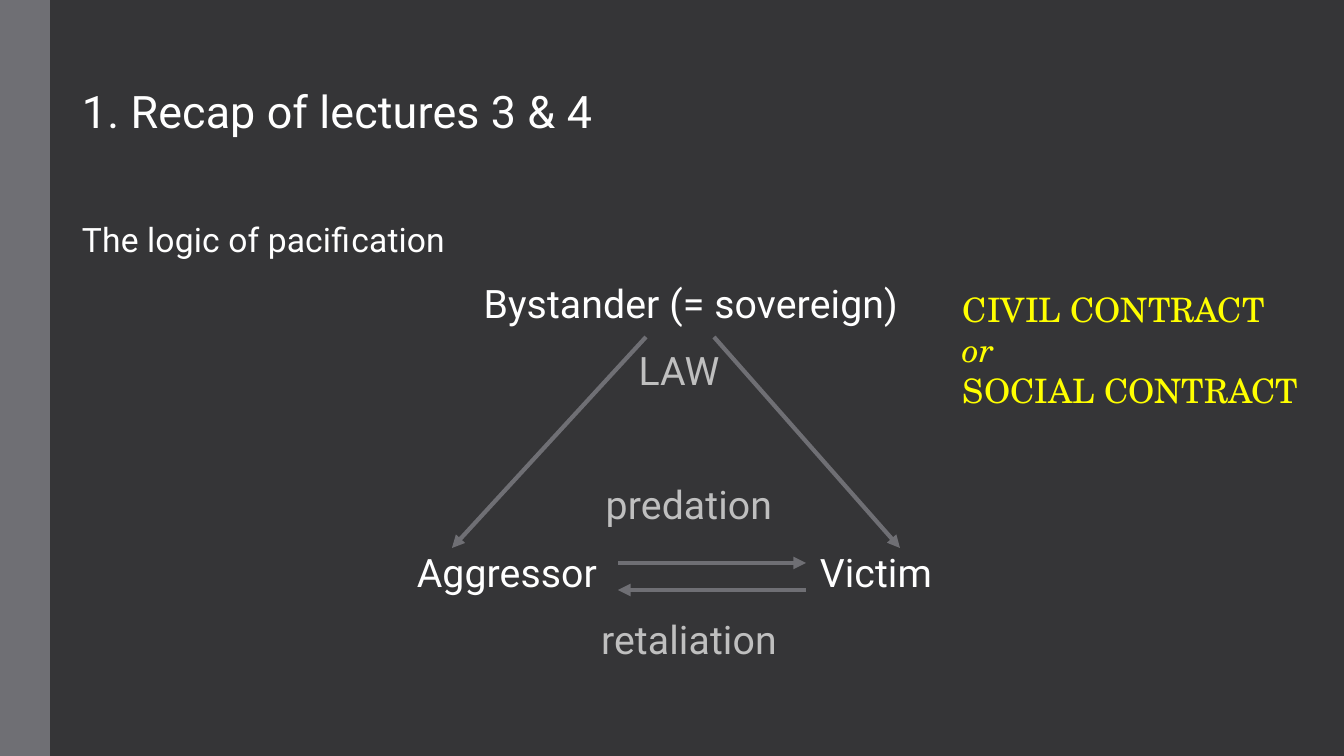
from lxml import etree
from pptx import Presentation
from pptx.dml.color import RGBColor
from pptx.enum.shapes import MSO_CONNECTOR, MSO_SHAPE
from pptx.enum.text import MSO_ANCHOR, MSO_AUTO_SIZE, PP_ALIGN
from pptx.oxml.ns import qn
from pptx.util import Pt

SLIDE_W, SLIDE_H = 1344, 756
EMU_PER_PX = 12192000 / SLIDE_W

BACKGROUND = RGBColor(0x35, 0x35, 0x37)
GREY = RGBColor(0x6F, 0x6F, 0x74)
PALE_GREY = RGBColor(0xBF, 0xBF, 0xBF)
WHITE = RGBColor(0xFF, 0xFF, 0xFF)
YELLOW = RGBColor(0xFF, 0xFF, 0x00)

BODY_FONT = "Roboto"
CONTRACT_FONT = "TeX Gyre Schola"
LEFT, CENTER = PP_ALIGN.LEFT, PP_ALIGN.CENTER
MIDDLE = MSO_ANCHOR.MIDDLE
NO_AUTOFIT = MSO_AUTO_SIZE.NONE
STRAIGHT = MSO_CONNECTOR.STRAIGHT
RECTANGLE = MSO_SHAPE.RECTANGLE

TITLE_ONLY = 5
TEXT_LEFT = 82
LINE_H = 60

# text, centre x, centre y, width, colour
ROLES_AND_ACTIONS = [
    ("Bystander (= sovereign)", 691, 303, 460, WHITE),
    ("LAW", 679, 370, 120, PALE_GREY),
    ("predation", 689, 504, 220, PALE_GREY),
    ("Aggressor", 507, 572, 220, WHITE),
    ("Victim", 876, 572, 140, WHITE),
    ("retaliation", 689, 639, 220, PALE_GREY),
]

# start, end
ARROWS = [
    ((646, 337), (452, 548)),
    ((714, 337), (900, 548)),
    ((618, 563), (806, 563)),
    ((806, 590), (618, 590)),
]


def px(length):
    return round(length * EMU_PER_PX)


def place(shape, left, top, width, height):
    shape.left, shape.top = px(left), px(top)
    shape.width, shape.height = px(width), px(height)


def format_line(shape, text, size, color, align):
    """Fill a shape with one line of body text, centred vertically."""
    frame = shape.text_frame
    frame.text = text
    frame.word_wrap = True
    frame.auto_size = NO_AUTOFIT
    frame.vertical_anchor = MIDDLE
    frame.margin_left = frame.margin_right = 0
    frame.margin_top = frame.margin_bottom = 0
    paragraph = frame.paragraphs[0]
    paragraph.alignment = align
    run = paragraph.runs[0]
    run.font.name = BODY_FONT
    run.font.size = Pt(size)
    run.font.color.rgb = color
    run.font._element.set("spc", "10")


def add_label(slide, text, left, center_y, width, size, color, align):
    label = slide.shapes.add_textbox(0, 0, 0, 0)
    place(label, left, center_y - LINE_H // 2, width, LINE_H)
    format_line(label, text, size, color, align)


def add_arrow(slide, start, end):
    arrow = slide.shapes.add_connector(STRAIGHT, *map(px, start + end))
    arrow.line.color.rgb = GREY
    arrow.line.width = Pt(3)
    etree.SubElement(arrow.line._get_or_add_ln(), qn("a:tailEnd"), type="triangle")
    etree.SubElement(arrow._element.spPr, qn("a:effectLst"))


def add_side_bar(slide):
    bar = slide.shapes.add_shape(RECTANGLE, 0, 0, px(50), px(SLIDE_H))
    bar.shadow.inherit = False
    bar.fill.solid()
    bar.fill.fore_color.rgb = GREY
    bar.line.fill.background()


def add_contract_note(slide):
    note = slide.shapes.add_textbox(0, 0, 0, 0)
    place(note, 953, 284, 356, 173)
    frame = note.text_frame
    frame.word_wrap = True
    frame.text = "CIVIL CONTRACT\nor\nSOCIAL CONTRACT"
    for paragraph in frame.paragraphs:
        font = paragraph.runs[0].font
        font.name = CONTRACT_FONT
        font.size = Pt(24)
        font.color.rgb = YELLOW
        font.italic = paragraph.text == "or"


def main():
    deck = Presentation()
    deck.slide_width, deck.slide_height = px(SLIDE_W), px(SLIDE_H)
    slide = deck.slides.add_slide(deck.slide_layouts[TITLE_ONLY])
    slide.background.fill.solid()
    slide.background.fill.fore_color.rgb = BACKGROUND

    add_side_bar(slide)
    title = slide.shapes.title
    place(title, TEXT_LEFT, 111 - LINE_H // 2, 1186, LINE_H)
    format_line(title, "1. Recap of lectures 3 & 4", 32, WHITE, LEFT)
    add_label(slide, "The logic of pacification", TEXT_LEFT, 239, 600, 24, WHITE, LEFT)

    for text, center_x, center_y, width, color in ROLES_AND_ACTIONS:
        add_label(slide, text, center_x - width // 2, center_y, width, 28, color, CENTER)
    for start, end in ARROWS:
        add_arrow(slide, start, end)
    add_contract_note(slide)

    deck.save("out.pptx")


if __name__ == "__main__":
    main()
